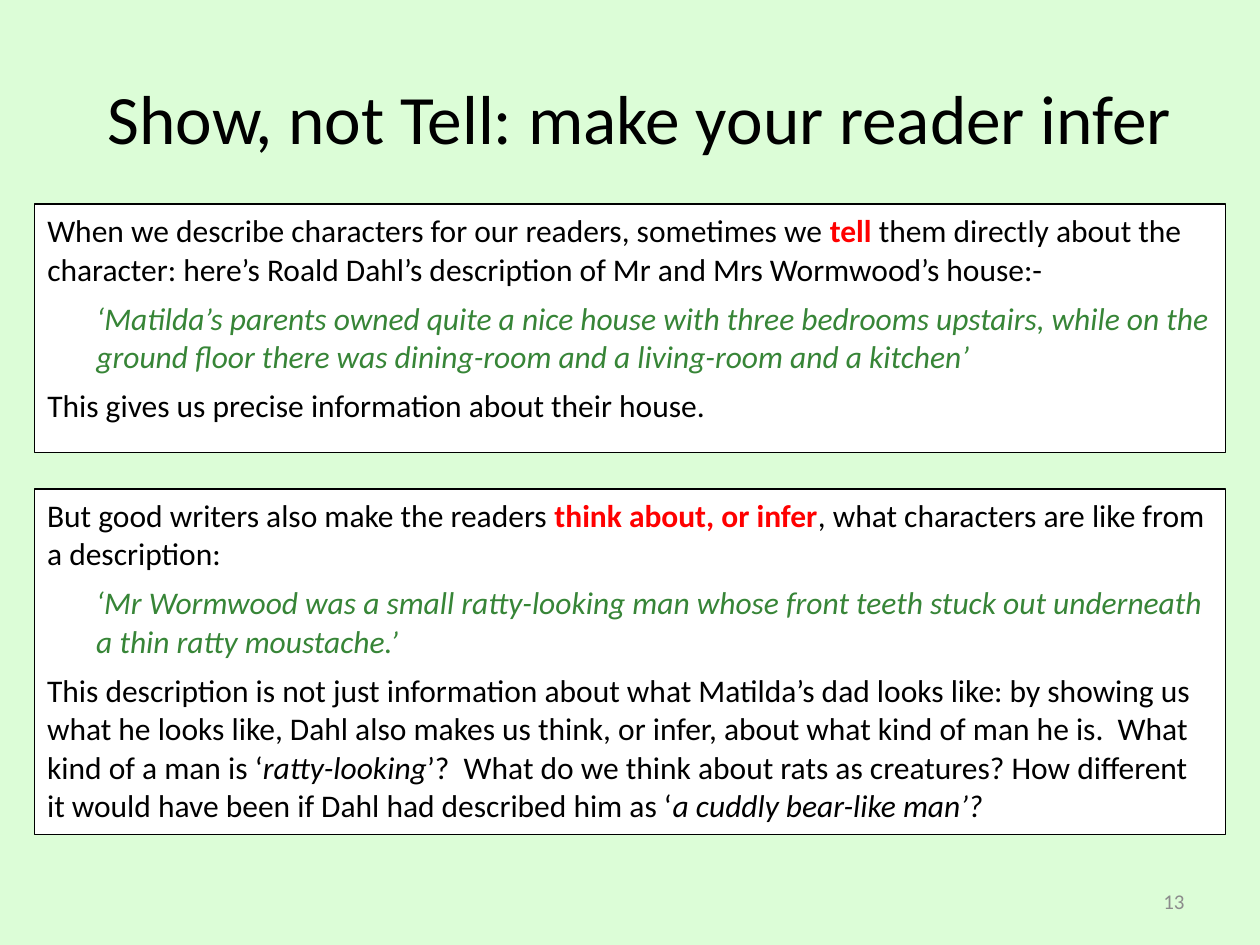
from pptx import Presentation
from pptx.dml.color import RGBColor
from pptx.enum.text import MSO_ANCHOR, MSO_AUTO_SIZE, PP_ALIGN
from pptx.oxml.xmlchemy import OxmlElement
from pptx.util import Inches, Pt

INK, RED, GREEN, GREY = "000000", "FF0000", "378537", "8C8C8C"
PAPER, MINT = "FFFFFF", "DCFDD7"


def color(code):
    return RGBColor.from_string(code)


def write(para, text, size=18, ink=INK, bold=False, italic=False):
    run = para.add_run()
    run.text = text
    font = run.font
    font.name, font.size = "Calibri", Pt(size)
    font.bold, font.italic = bold, italic
    font.color.rgb = color(ink)


def strong(text):
    return text, dict(ink=RED, bold=True)


def slanted(text):
    return text, dict(italic=True)


def quoted(text):
    return text, dict(ink=GREEN, italic=True)


class Deck:
    def __init__(self, wide, high):
        self.prs = Presentation()
        self.prs.slide_width, self.prs.slide_height = Inches(wide), Inches(high)
        self.slide = self.prs.slides.add_slide(self.prs.slide_layouts[1])
        fill = self.slide.background.fill
        fill.solid()
        fill.fore_color.rgb = color(MINT)

    def share(self, left, top, width, height):
        wide, high = self.prs.slide_width, self.prs.slide_height
        parts = zip((left, top, width, height), (wide, high, wide, high))
        return [int(part * whole / 100) for part, whole in parts]

    def place(self, shape, area, anchor):
        shape.left, shape.top, shape.width, shape.height = self.share(*area)
        frame = shape.text_frame
        frame.word_wrap = True
        frame.auto_size = MSO_AUTO_SIZE.NONE
        frame.vertical_anchor = anchor
        return frame

    def box(self):
        return self.slide.shapes.add_textbox(0, 0, 0, 0)

    def label(self, shape, area, text, align, **style):
        para = self.place(shape, area, MSO_ANCHOR.MIDDLE).paragraphs[0]
        para.alignment = align
        write(para, text, **style)

    def panel(self, shape, area, paras):
        frame = self.place(shape, area, MSO_ANCHOR.TOP)
        shape.fill.solid()
        shape.fill.fore_color.rgb = color(PAPER)
        shape.line.color.rgb = color(INK)
        shape.line.width = Pt(0.75)
        for i, (indent, runs) in enumerate(paras):
            para = frame.add_paragraph() if i else frame.paragraphs[0]
            para.line_spacing = Pt(22)
            para.space_before, para.space_after = Pt(0), Pt(6)
            props = para._p.get_or_add_pPr()
            props.set("marL", str(Inches(indent)))
            props.set("indent", "0")
            props.append(OxmlElement("a:buNone"))
            for run in runs:
                text, style = (run, {}) if isinstance(run, str) else run
                write(para, text, **style)


TELL = [
    (0, ["When we describe characters for our readers, sometimes we ",
         strong("tell"),
         " them directly about the character: here’s Roald Dahl’s description "
         "of Mr and Mrs Wormwood’s house:-"]),
    (0.39, [quoted("‘Matilda’s parents owned quite a nice house with three "
                   "bedrooms upstairs, while on the ground floor there was "
                   "dining-room and a living-room and a kitchen’")]),
    (0, ["This gives us precise information about their house."]),
]

SHOW = [
    (0, ["But good writers also make the readers ",
         strong("think about, or infer"),
         ", what characters are like from a description:"]),
    (0.39, [quoted("‘Mr Wormwood was a small ratty-looking man whose front teeth "
                   "stuck out underneath a thin ratty moustache.’")]),
    (0, ["This description is not just information about what Matilda’s dad "
         "looks like: by showing us what he looks like, Dahl also makes us "
         "think, or infer, about what kind of man he is.  What kind of a man is ‘",
         slanted("ratty-looking"),
         "’?  What do we think about rats as creatures? How different it would "
         "have been if Dahl had described him as ‘",
         slanted("a cuddly bear-like man’?")]),
]


def main():
    deck = Deck(10, 7.5)
    title, body = deck.slide.placeholders
    deck.label(title, (5, 4, 91.5, 16.67), "Show, not Tell: make your reader infer",
               PP_ALIGN.CENTER, size=39.6)
    deck.panel(body, (2.75, 21.6, 94.5, 26.27), TELL)
    deck.label(deck.box(), (71.7, 92.67, 23.3, 5.33), "13",
               PP_ALIGN.RIGHT, size=12, ink=GREY)
    deck.panel(deck.box(), (2.75, 51.75, 94.5, 36.53), SHOW)
    deck.prs.save("out.pptx")


if __name__ == "__main__":
    main()
